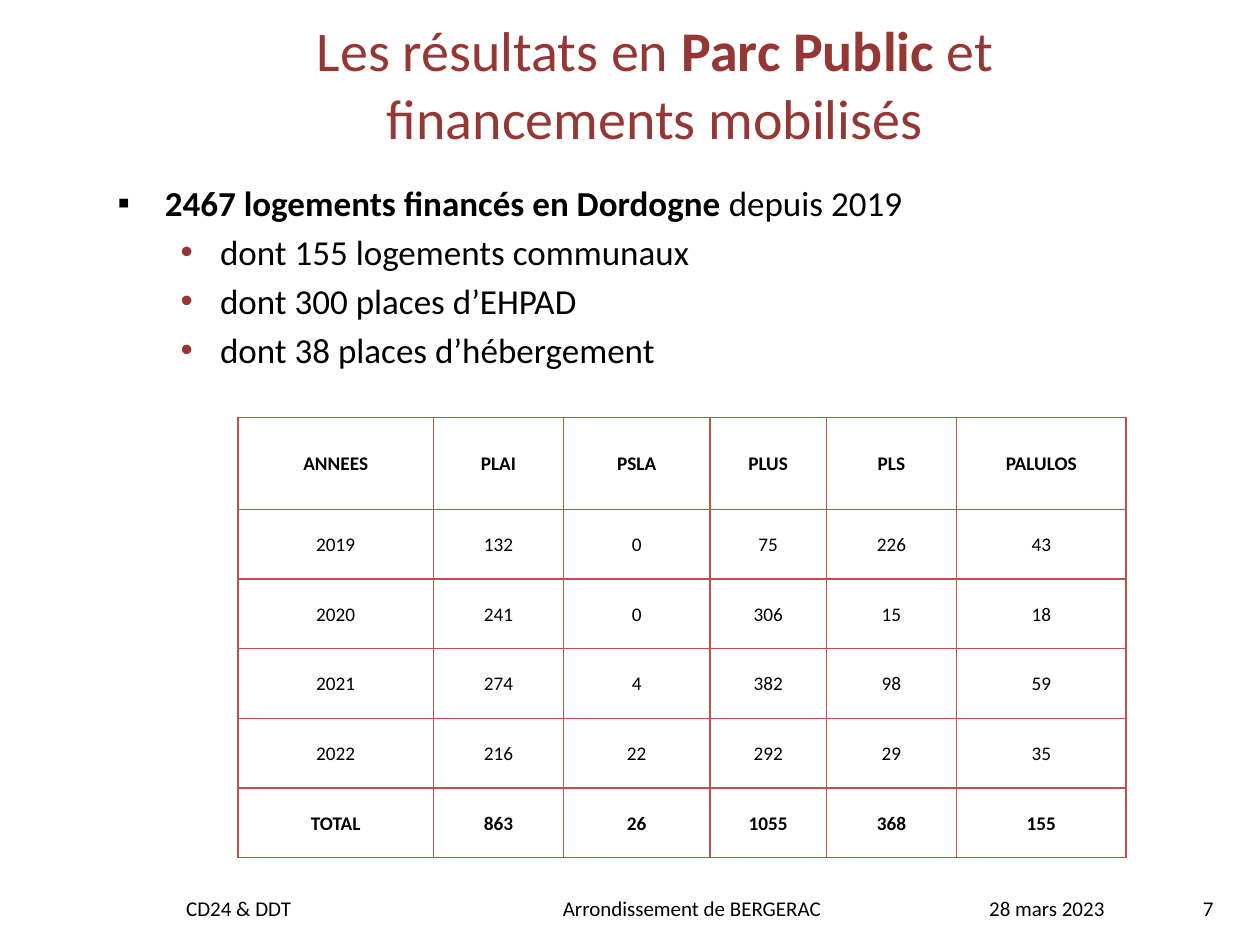
from lxml.etree import SubElement as Sub
from pptx import Presentation
from pptx.dml.color import RGBColor as Rgb
from pptx.enum.text import MSO_ANCHOR as Anchor, MSO_AUTO_SIZE as Auto, PP_ALIGN as Align
from pptx.oxml.ns import qn
from pptx.util import Pt

INK = {"text": "000000", "title": "953735", "line": "C0504D"}
FACE = "Calibri"

ITEMS = [
    [("2467 logements financés en Dordogne ", True), ("depuis 2019", False)],
    [("dont 155 logements communaux", False)],
    [("dont 300 places d’EHPAD", False)],
    [("dont 38 places d’hébergement", False)],
]
LEVELS = [
    {"mark": "▪", "ink": "text", "left": 27, "hang": 27, "gap": 0},
    {"mark": "•", "ink": "title", "left": 58.5, "hang": 22.5, "gap": 4},
]
ROWS = [
    ["ANNEES", "PLAI", "PSLA", "PLUS", "PLS", "PALULOS"],
    ["2019", "132", "0", "75", "226", "43"],
    ["2020", "241", "0", "306", "15", "18"],
    ["2021", "274", "4", "382", "98", "59"],
    ["2022", "216", "22", "292", "29", "35"],
    ["TOTAL", "863", "26", "1055", "368", "155"],
]
WIDTHS = [111.7, 74.3, 83.7, 66.6, 74.3, 97]
HEAD, ROW = 52.5, 39.85
FOOT = [
    ("CD24 & DDT", 0, 187, Align.LEFT),
    ("Arrondissement de BERGERAC", 215.3, 204.5, Align.LEFT),
    ("28 mars 2023", 442, 113.8, Align.CENTER),
    ("7", 546.5, 54.7, Align.RIGHT),
]


def place(shape, box):
    shape.left, shape.top, shape.width, shape.height = map(Pt, box)


def style(para, size, ink="text", align=Align.LEFT, bold=None):
    para.alignment = align
    font = para.font
    font.name, font.size, font.bold = FACE, Pt(size), bold
    font.color.rgb = Rgb.from_string(INK[ink])


def add_runs(para, parts):
    for text, bold in parts:
        run = para.add_run()
        run.text = text
        run.font.bold = bold


def add_ink(node, ink):
    Sub(node, qn("a:srgbClr"), val=INK[ink])


def add_mark(para, level):
    props = para._p.get_or_add_pPr()
    props.set("marL", str(Pt(level["left"])))
    props.set("indent", str(-Pt(level["hang"])))
    add_ink(Sub(props, qn("a:buClr")), level["ink"])
    Sub(props, qn("a:buFont"), typeface="Arial")
    Sub(props, qn("a:buChar"), char=level["mark"])


def add_title(slide, box):
    shape = slide.shapes.title
    place(shape, box)
    frame = shape.text_frame
    frame.auto_size = Auto.NONE
    frame.vertical_anchor = Anchor.MIDDLE
    para = frame.paragraphs[0]
    add_runs(para, [("Les résultats en ", False), ("Parc Public ", True),
                    ("et financements mobilisés", False)])
    style(para, 32, "title", Align.CENTER)


def add_list(slide, box):
    shape = slide.placeholders[1]
    place(shape, box)
    frame = shape.text_frame
    frame.auto_size = Auto.NONE
    for i, parts in enumerate(ITEMS):
        para = frame.add_paragraph() if i else frame.paragraphs[0]
        para.level = min(i, 1)
        level = LEVELS[para.level]
        add_mark(para, level)
        para.space_before = Pt(level["gap"])
        add_runs(para, parts)
        style(para, 20)


def add_edges(cell):
    props = cell._tc.get_or_add_tcPr()
    for side in ("lnL", "lnR", "lnT", "lnB"):
        line = Sub(props, qn("a:" + side), w=str(Pt(1)))
        add_ink(Sub(line, qn("a:solidFill")), "line")


def add_grid(slide, left, top):
    high = HEAD + ROW * (len(ROWS) - 1)
    table = slide.shapes.add_table(len(ROWS), len(WIDTHS), Pt(left), Pt(top),
                                   Pt(sum(WIDTHS)), Pt(high)).table
    table.first_row = table.horz_banding = False
    for col, width in zip(table.columns, WIDTHS):
        col.width = Pt(width)
    for r, texts in enumerate(ROWS):
        table.rows[r].height = Pt(ROW if r else HEAD)
        for c, text in enumerate(texts):
            cell = table.cell(r, c)
            add_edges(cell)
            cell.fill.background()
            cell.vertical_anchor = Anchor.MIDDLE
            cell.margin_left = cell.margin_right = cell.margin_top = Pt(0.7)
            cell.margin_bottom = 0
            cell.text = text
            style(cell.text_frame.paragraphs[0], 11, align=Align.CENTER,
                  bold=r in (0, len(ROWS) - 1))


def add_foot(slide, left, top):
    for text, shift, width, align in FOOT:
        box = slide.shapes.add_textbox(Pt(left + shift), Pt(top), Pt(width), Pt(22))
        frame = box.text_frame
        frame.word_wrap = True
        frame.text = text
        style(frame.paragraphs[0], 12, align=align)


def main():
    deck = Presentation()
    deck.slide_width, deck.slide_height = Pt(720), Pt(540)
    slide = deck.slides.add_slide(deck.slide_layouts[1])
    add_foot(slide, 99.3, 508.3)
    add_list(slide, (60, 100, 660, 295))
    add_title(slide, (105, 13.7, 538.6, 67.7))
    add_grid(slide, 136, 238.5)
    deck.save("out.pptx")


if __name__ == "__main__":
    main()
